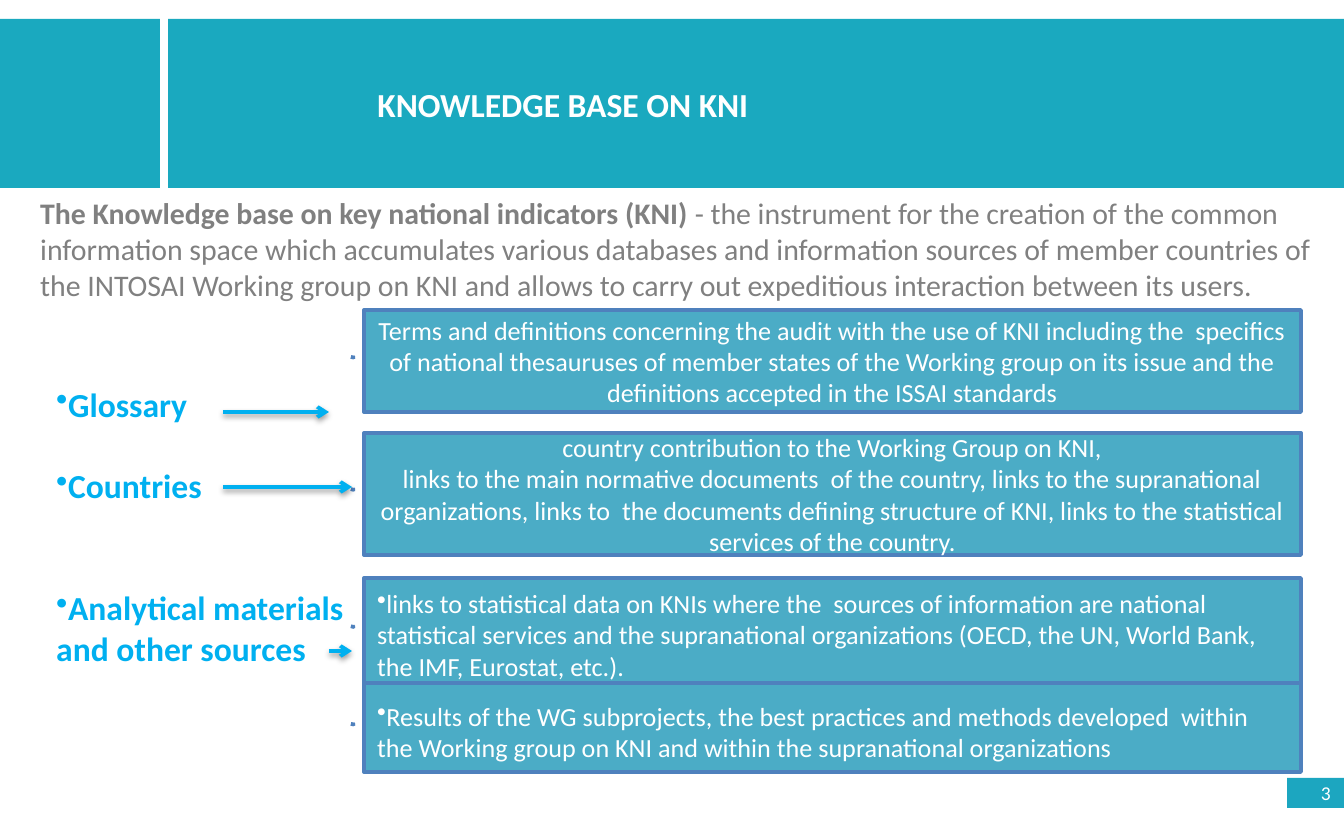
from dataclasses import dataclass

from lxml.etree import SubElement
from pptx import Presentation
from pptx.dml.color import RGBColor
from pptx.enum.shapes import MSO_CONNECTOR, MSO_SHAPE
from pptx.enum.text import MSO_ANCHOR as Anchor, PP_ALIGN as Align
from pptx.oxml import parse_xml
from pptx.oxml.ns import nsdecls, qn
from pptx.util import Emu, Pt

PX = 914400 / 134.4


@dataclass(frozen=True)
class Theme:
    font: str = "Calibri"
    band: str = "1AA9BF"
    number_fill: str = "1CA6C0"
    callout_fill: str = "4BACC6"
    callout_line: str = "4F81BD"
    accent: str = "00B0F0"
    body: str = "808080"
    white: str = "FFFFFF"
    heading_size: float = 18
    body_size: float = 16
    callout_size: float = 14
    number_size: float = 10.5
    line_width: float = 2


THEME = Theme()
CALLOUT_ADJUSTMENTS = (0.46, -0.014, 0.467, -0.011, 0.456, -0.012)
CALLOUT_LEFT, CALLOUT_WIDTH = 364, 937

GLOSSARY = ("Terms and definitions concerning the audit with the use of KNI including the  "
            "specifics of national thesauruses of member states of the Working group on its "
            "issue and the definitions accepted in the ISSAI standards")
COUNTRIES = (
    "country contribution to the Working Group on KNI,",
    "links to the main normative documents  of the country, links to the supranational "
    "organizations, links to  the documents defining structure of KNI, links to the "
    "statistical services of the country.",
)
STATISTICS = ("links to statistical data on KNIs where the  sources of information are national "
              "statistical services and the supranational organizations (OECD, the UN, World "
              "Bank, the IMF, Eurostat, etc.).")
RESULTS = ("Results of the WG subprojects, the best practices and methods developed  within the "
           "Working group on KNI and within the supranational organizations")
INTRO_TERM = "The Knowledge base on key national indicators (KNI) "
INTRO = ("- the instrument for the creation of the common information space which accumulates "
         "various databases and information sources of member countries of the INTOSAI Working "
         "group on KNI and allows to carry out expeditious interaction between its users.")


def px(*lengths):
    return [Emu(round(length * PX)) for length in lengths]


def rgb(value):
    return RGBColor.from_string(value)


def write(paragraph, text, size, color, bold=False, align=Align.LEFT, bullet=False, before=0):
    """Append a formatted run to the paragraph and set the paragraph's format."""
    paragraph.alignment = align
    if before:
        paragraph.space_before = Pt(before)
    properties = paragraph._p.get_or_add_pPr()
    if bullet:
        properties.set("marL", "0")
        properties.set("indent", "0")
        SubElement(properties, qn("a:buChar"), char="•")
    run = paragraph.add_run()
    run.text = text
    font = run.font
    font.name, font.size, font.bold = THEME.font, Pt(size), bold
    font.color.rgb = rgb(color)


def next_paragraph(frame, index):
    return frame.paragraphs[0] if index == 0 else frame.add_paragraph()


def add_panel(slide, box, fill, preset=MSO_SHAPE.RECTANGLE):
    shape = slide.shapes.add_shape(preset, *px(*box))
    shape.shadow.inherit = False
    shape.fill.solid()
    shape.fill.fore_color.rgb = rgb(fill)
    shape.line.fill.background()
    return shape


def add_text_frame(slide, box):
    frame = slide.shapes.add_textbox(*px(*box)).text_frame
    frame.word_wrap = True
    return frame


def add_title(slide, text):
    title = slide.shapes.title
    title.left, title.top, title.width, title.height = px(364, 77, 672, 54)
    title.text_frame.vertical_anchor = Anchor.MIDDLE
    write(title.text_frame.paragraphs[0], text, THEME.heading_size, THEME.white, bold=True)


def add_callout(slide, top, height, texts, bullet=False):
    box = CALLOUT_LEFT, top, CALLOUT_WIDTH, height
    shape = add_panel(slide, box, THEME.callout_fill, MSO_SHAPE.LINE_CALLOUT_2)
    for index, value in enumerate(CALLOUT_ADJUSTMENTS):
        shape.adjustments[index] = value
    shape.line.color.rgb = rgb(THEME.callout_line)
    shape.line.width = Pt(THEME.line_width)
    frame = shape.text_frame
    frame.word_wrap = True
    frame.vertical_anchor = Anchor.MIDDLE
    frame.margin_top, frame.margin_bottom = px(8, 0) if bullet else px(7, 7)
    for index, text in enumerate(texts):
        write(next_paragraph(frame, index), text, THEME.callout_size, THEME.white,
              align=Align.LEFT if bullet else Align.CENTER, bullet=bullet)


def add_arrow(slide, start, end):
    connector = slide.shapes.add_connector(MSO_CONNECTOR.STRAIGHT, *px(*start, *end))
    connector.line.color.rgb = rgb(THEME.accent)
    connector.line.width = Pt(THEME.line_width)
    SubElement(connector.line._get_or_add_ln(), qn("a:tailEnd"), type="arrow")
    connector._element.spPr.append(parse_xml(
        f'<a:effectLst {nsdecls("a")}><a:outerShdw blurRad="{Pt(3.1)}" dist="{Pt(1.6)}" '
        'dir="5400000" rotWithShape="0"><a:srgbClr val="000000"><a:alpha val="38000"/>'
        '</a:srgbClr></a:outerShdw></a:effectLst>'))


def add_slide_number(slide, number):
    frame = add_panel(slide, (1287, 778, 57, 30), THEME.number_fill).text_frame
    frame.vertical_anchor = Anchor.MIDDLE
    write(frame.paragraphs[0], number, THEME.number_size, THEME.white, align=Align.RIGHT)


def add_intro(slide):
    paragraph = add_text_frame(slide, (27, 188, 1301, 122)).paragraphs[0]
    write(paragraph, INTRO_TERM, THEME.body_size, THEME.body, bold=True)
    write(paragraph, INTRO, THEME.body_size, THEME.body)


def add_topics(slide):
    frame = add_text_frame(slide, (43, 377, 408, 380))
    topics = (("Glossary", True, 0), ("Countries", True, 22),
              ("Analytical materials", True, 44), ("and other sources", False, 0))
    for index, (text, bullet, before) in enumerate(topics):
        write(next_paragraph(frame, index), text, THEME.heading_size, THEME.accent,
              bold=True, bullet=bullet, before=before)


def main():
    presentation = Presentation()
    presentation.slide_width, presentation.slide_height = px(1344, 840)
    slide = presentation.slides.add_slide(presentation.slide_layouts[5])

    for left, width in ((168, 1176), (0, 160)):
        band = add_panel(slide, (left, 19, width, 169), THEME.band)
        # Bands go behind the title placeholder.
        slide.shapes.title._element.addprevious(band._element)
    add_slide_number(slide, "3")
    add_title(slide, "KNOWLEDGE BASE ON KNI")
    add_intro(slide)
    add_topics(slide)

    add_callout(slide, 310, 102, [GLOSSARY])
    add_callout(slide, 433, 122, COUNTRIES)
    add_callout(slide, 578, 105, [STATISTICS], bullet=True)
    add_callout(slide, 683, 89, [RESULTS], bullet=True)

    for start, end in (((223, 412), (329, 412)), ((223, 487), (352, 487)),
                       ((329, 651), (352, 651))):
        add_arrow(slide, start, end)

    presentation.save("out.pptx")


if __name__ == "__main__":
    main()
